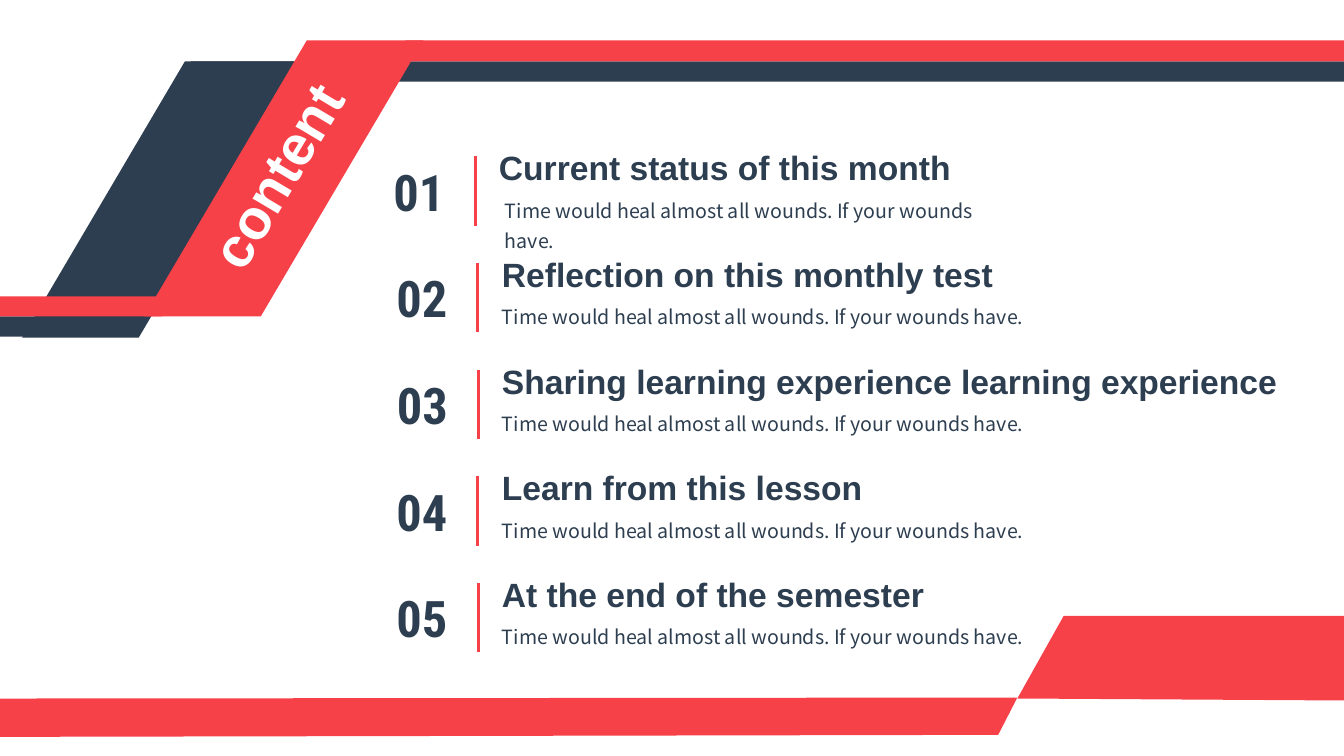
"""Build the content slide with five numbered topics."""
from lxml.etree import SubElement
from pptx import Presentation
from pptx.dml.color import RGBColor
from pptx.enum.shapes import MSO_CONNECTOR as Wire, MSO_SHAPE as Kind
from pptx.enum.text import MSO_ANCHOR as Anchor, PP_ALIGN as Align
from pptx.oxml.ns import qn
from pptx.util import Inches, Pt

NAVY = RGBColor(0x2D, 0x3E, 0x50)
RED = RGBColor(0xF7, 0x41, 0x49)
WHITE = RGBColor(0xFF, 0xFF, 0xFF)

NUMBER = {"size": Pt(36), "name": "Roboto Condensed", "bold": True}
TITLE = {"size": Pt(24), "name": "Arial", "bold": True}
DETAIL = {"size": Pt(14), "name": "Noto Sans CJK SC", "bold": False}
LABEL = {"size": Pt(40), "name": "Arial", "bold": True}


def paint(shape, color):
    shape.shadow.inherit = False
    shape.fill.solid()
    shape.fill.fore_color.rgb = color
    shape.line.fill.background()


def write(home, text, place, font, color, frame, para):
    box = home.add_textbox(*map(Inches, place))
    body = box.text_frame
    for key, value in frame.items():
        setattr(body, key, value)
    line = body.paragraphs[0]
    for key, value in para.items():
        setattr(line, key, value)
    run = line.add_run()
    run.text = text
    for key, value in font.items():
        setattr(run.font, key, value)
    run.font.color.rgb = color
    return box


deck = Presentation()
deck.slide_width = Inches(13.33)
deck.slide_height = Inches(7.5)
slide = deck.slides.add_slide(deck.slide_layouts[6])
shapes = slide.shapes

BAR, SLANT = Kind.RECTANGLE, Kind.PARALLELOGRAM
bands = [
    (NAVY, [(BAR, 1.89, 0.61, 11.44, 0.2), (BAR, -0.01, 3.14, 0.72, 0.2),
            (SLANT, 0.22, 0.61, 2.77, 2.74)]),
    (RED, [(SLANT, 1.43, 0.4, 2.77, 2.74), (BAR, 4.02, 0.4, 9.31, 0.21),
           (BAR, 0, 2.94, 1.61, 0.2)]),
]
for color, parts in bands:
    group = shapes.add_group_shape()
    for kind, *place in parts:
        part = group.shapes.add_shape(kind, *map(Inches, place))
        if kind == SLANT:
            part.adjustments[0] = 0.589
        paint(part, color)

footer = [
    [(0, 6.93), (10.09, 6.92), (9.9, 7.29), (0, 7.31)],
    [(13.38, 6.11), (13.38, 6.95), (10.09, 6.93), (10.55, 6.11)],
]
for points in footer:
    start, *rest = [(Inches(x), Inches(y)) for x, y in points]
    pen = shapes.build_freeform(*start)
    pen.add_line_segments(rest, close=True)
    paint(pen.convert_to_shape(), RED)

zero = dict.fromkeys(
    ["margin_left", "margin_top", "margin_right", "margin_bottom"], 0)
middle = {"word_wrap": False, "vertical_anchor": Anchor.MIDDLE}
bottom = {"word_wrap": False, "vertical_anchor": Anchor.BOTTOM}
detail = "Time would heal almost all wounds. If your wounds have."
topics = [
    ("Current status of this month", 5.51, 0.71, 4.72, 4.85, 4.91, 5.18),
    ("Reflection on this monthly test", 5.51, 0.77, 4.74, 4.88, 4.88, 5.51),
    ("Sharing learning experience learning experience",
     8.2, 0.78, 4.75, 4.88, 4.88, 5.51),
    ("Learn from this lesson", 5.51, 0.77, 4.74, 4.88, 4.88, 5.51),
    ("At the end of the semester", 5.51, 0.77, 4.75, 4.88, 4.88, 5.51),
]
items = shapes.add_group_shape().shapes
for row, (title, length, wide, rule, left, inset, span) in enumerate(topics):
    top = 1.45 + 1.058 * row
    write(items, f"{row + 1:02}", (3.8, top + 0.14, wide, 0.61), NUMBER, NAVY,
          {**zero, **middle}, {"alignment": Align.CENTER})
    line = items.add_connector(
        Wire.STRAIGHT, *map(Inches, (rule, top + 0.1, rule, top + 0.79)))
    line.line.color.rgb = RED
    line.line.width = Pt(2.25)
    SubElement(line.element.spPr, qn("a:effectLst"))
    write(items, detail, (inset, top + 0.4, span, 0.42), DETAIL, NAVY,
          {"word_wrap": True}, {"line_spacing": 1.3})
    write(items, title, (left, top, length, 0.46), TITLE, NAVY, bottom, {})

label = write(shapes, "content", (1.65, 1.36, 2.29, 0.72), LABEL, WHITE,
              middle, {"line_spacing": 0.9})
label.rotation = 300.7

deck.save("out.pptx")
